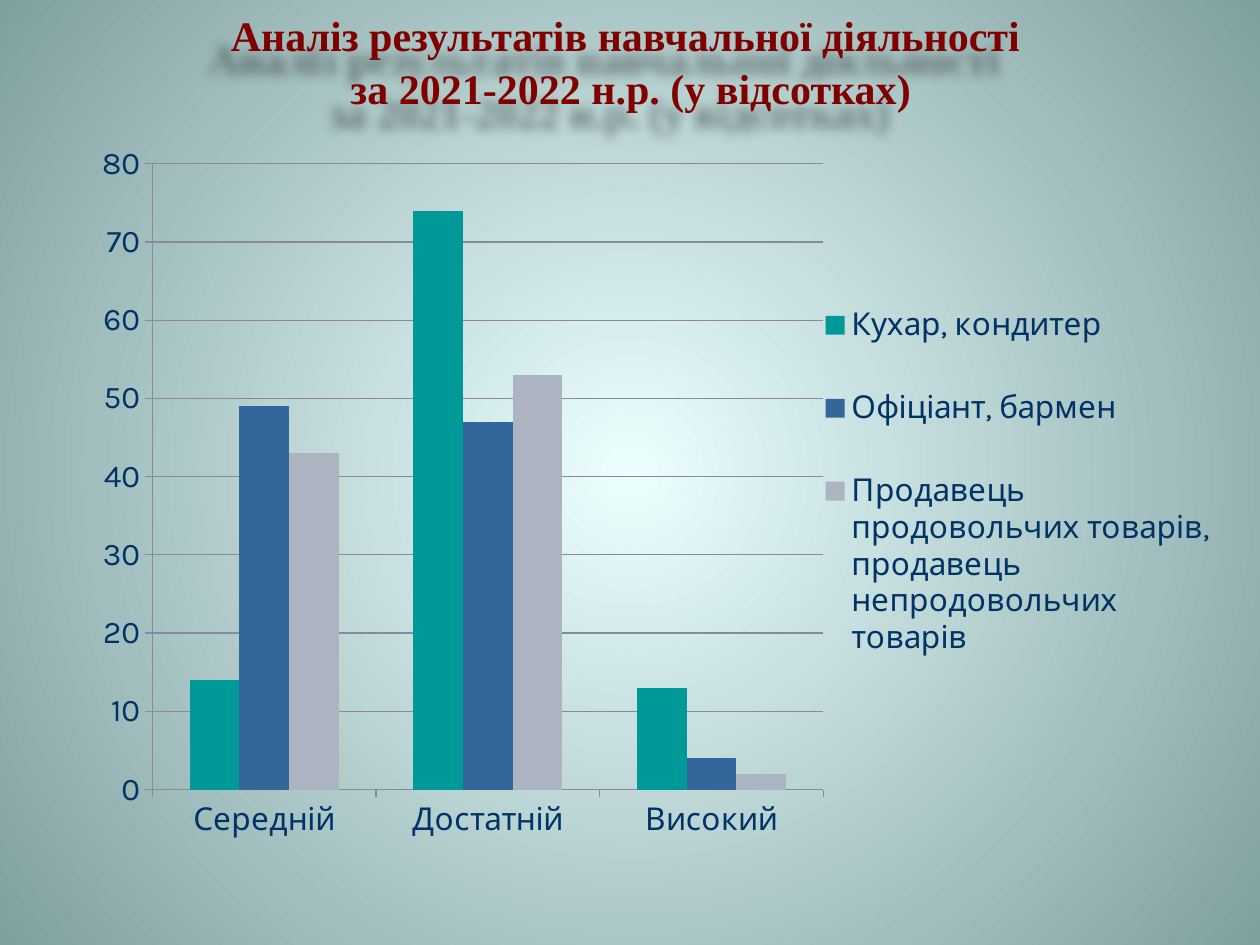
import copy
from lxml import etree
from pptx import Presentation
from pptx import util as u
from pptx.chart.data import CategoryChartData
from pptx.dml.color import RGBColor
from pptx.enum import chart as ch, text
from pptx.oxml import parse_xml
from pptx.oxml.ns import nsdecls, qn

TITLE = "Аналіз результатів навчальної діяльності \vза 2021-2022 н.р. (у відсотках)"
LEVELS = ["Середній", "Достатній", "Високий"]
TRADES = [
    ("Кухар, кондитер", (14, 74, 13), "teal"),
    ("Офіціант, бармен", (49, 47, 4), "blue"),
    ("Продавець продовольчих товарів, продавець непродовольчих товарів", (43, 53, 2), "grey"),
]
COLORS = {"teal": "009999", "blue": "336699", "grey": "ACB3C1", "text": "003366",
          "title": "800000", "axis": "868A9C", "center": "EBFFFF", "edge": "809F9F"}
# Shares of the chart's size: left, top, width, height
PLOT_AREA = (0.068, 0.026, 0.583, 0.864)
LEGEND_AREA = (0.645, 0.16, 0.35, 0.61)


def rgb(name):
    return RGBColor.from_string(COLORS[name])


def style_font(font, name, size, color, bold=False):
    font.name, font.size, font.bold = name, u.Pt(size), bold
    font.color.rgb = rgb(color)


def paint_background(page):
    page.background.fill.solid()
    properties = page.background._cSld.bg.bgPr
    gradient = parse_xml(
        f'<a:gradFill {nsdecls("a")} rotWithShape="1"><a:gsLst>'
        f'<a:gs pos="0"><a:srgbClr val="{COLORS["center"]}"/></a:gs>'
        f'<a:gs pos="100000"><a:srgbClr val="{COLORS["edge"]}"/></a:gs></a:gsLst>'
        '<a:path path="circle"><a:fillToRect l="50000" t="50000" r="50000" b="50000"/></a:path>'
        '</a:gradFill>')
    properties.replace(properties.find(qn("a:solidFill")), gradient)


def add_title(page):
    title = page.shapes.title
    title.left, title.top, title.width, title.height = map(u.Inches, (0.01, 0, 9.99, 0.95))
    frame = title.text_frame
    frame.text = TITLE
    frame.auto_size = text.MSO_AUTO_SIZE.NONE
    frame.vertical_anchor = text.MSO_ANCHOR.MIDDLE
    para = frame.paragraphs[0]
    para.alignment = text.PP_ALIGN.CENTER
    para.line_spacing = 1.05
    for span in para.runs:
        style_font(span.font, "Times New Roman", 24, "title", True)
    line_break = para._p.find(qn("a:br"))
    line_break.append(copy.deepcopy(para.runs[0]._r.rPr))
    title._element.spPr.append(parse_xml(
        f'<a:effectLst {nsdecls("a")}><a:outerShdw blurRad="76200" dist="228600" dir="8100000">'
        '<a:srgbClr val="000000"><a:alpha val="40000"/></a:srgbClr></a:outerShdw></a:effectLst>'))


def manual_layout(area, inner=False):
    layout = parse_xml(f'<c:layout {nsdecls("c")}><c:manualLayout/></c:layout>')
    values = [("layoutTarget", "inner")] if inner else []
    values += [("xMode", "edge"), ("yMode", "edge"), *zip("xywh", area)]
    for tag, value in values:
        etree.SubElement(layout[0], qn(f"c:{tag}"), val=str(value))
    return layout


def add_results_chart(page):
    data = CategoryChartData()
    data.categories = LEVELS
    for name, values, _ in TRADES:
        data.add_series(name, values)
    frame = page.shapes.add_chart(ch.XL_CHART_TYPE.COLUMN_CLUSTERED,
                                  *map(u.Inches, (0.59, 1.15, 9.13, 5.75)), data)
    chart = frame.chart
    chart.has_title = False
    style_font(chart.font, "Karla", 18, "text")

    plot = chart.plots[0]
    plot.gap_width, plot.overlap, plot.vary_by_categories = 150, 0, False
    for series, (_, _, color) in zip(plot.series, TRADES):
        series.format.fill.solid()
        series.format.fill.fore_color.rgb = rgb(color)

    values_axis = chart.value_axis
    values_axis.minimum_scale, values_axis.maximum_scale, values_axis.major_unit = 0, 80, 10
    values_axis.has_major_gridlines = True
    for axis in (chart.category_axis, values_axis):
        axis.major_tick_mark = ch.XL_TICK_MARK.OUTSIDE
        style_font(axis.tick_labels.font, "Karla", 18, "text")
    for owner in (chart.category_axis, values_axis, values_axis.major_gridlines):
        owner.format.line.color.rgb = rgb("axis")
        owner.format.line.width = u.Pt(0.75)

    chart.has_legend = True
    legend = chart.legend
    legend.position = ch.XL_LEGEND_POSITION.RIGHT
    legend.include_in_layout = False
    style_font(legend.font, "Karla", 18, "text")

    plot_area = chart._chartSpace.chart.plotArea
    for element, layout in ((plot_area, manual_layout(PLOT_AREA, inner=True)),
                            (legend._element, manual_layout(LEGEND_AREA))):
        for old in element.findall(qn("c:layout")):
            element.remove(old)
        element.insert(0 if element is plot_area else 1, layout)


def main():
    deck = Presentation()
    deck.slide_width, deck.slide_height = u.Inches(10), u.Inches(7.5)
    page = deck.slides.add_slide(deck.slide_layouts[5])
    paint_background(page)
    add_title(page)
    add_results_chart(page)
    deck.save("out.pptx")


if __name__ == "__main__":
    main()
